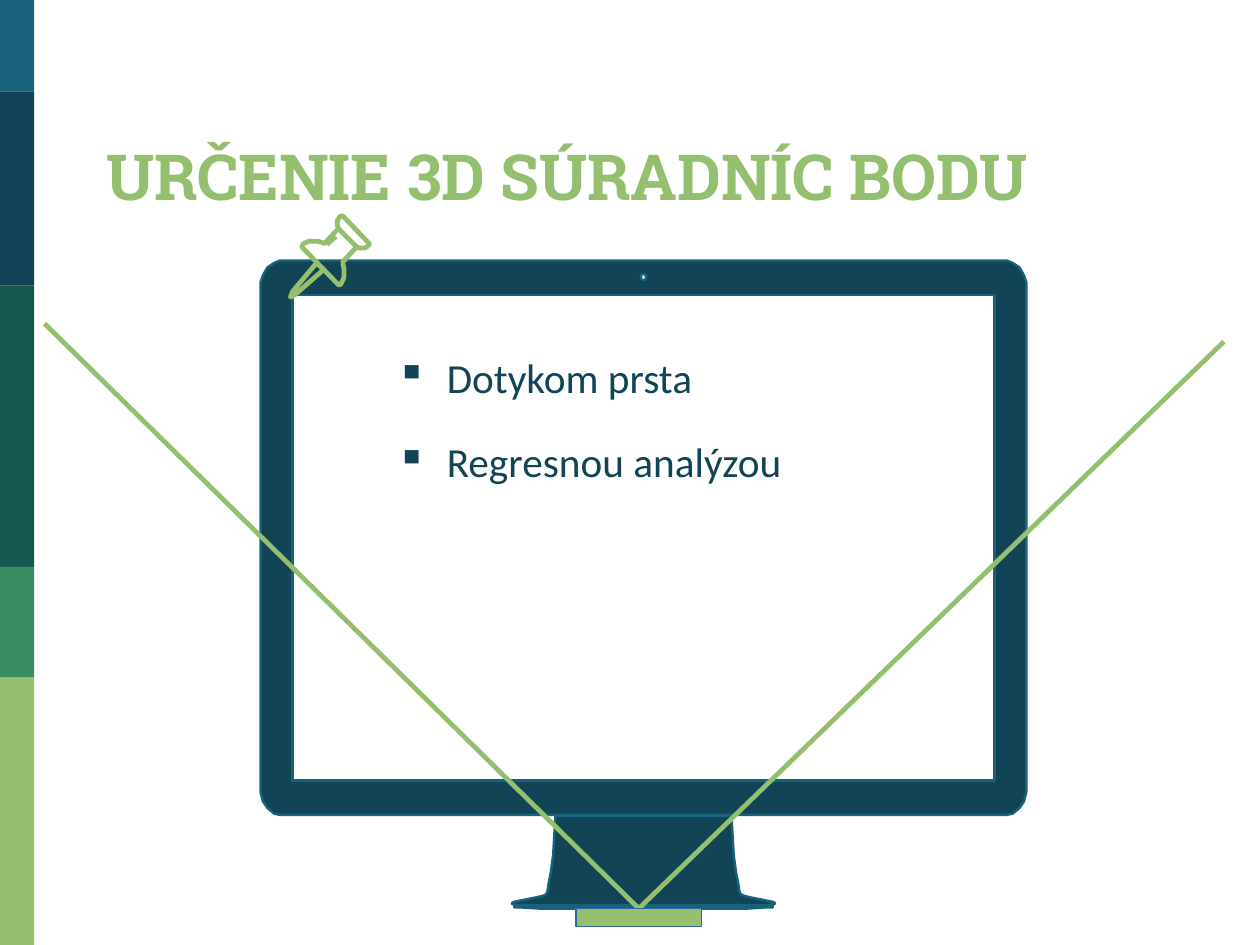
from dataclasses import dataclass

from lxml.etree import SubElement
from pptx import Presentation
from pptx.dml.color import RGBColor
from pptx.enum.shapes import MSO_CONNECTOR, MSO_SHAPE
from pptx.enum.text import MSO_ANCHOR as Anchor
from pptx.oxml.ns import qn
from pptx.util import Cm, Pt

Points = list[tuple[int, int]]


@dataclass(frozen=True)
class Theme:
    green: str = "94BF6E"
    navy: str = "114454"
    teal: str = "18637B"
    base_edge: str = "3465A4"
    strip: tuple[str, ...] = ("18637B", "124057", "165751", "3B8D61", "94BF6E")
    title_font: str = "Roboto Slab"
    body_font: str = "Calibri"
    title_size: float = 40
    body_size: float = 26
    bullet_gap: float = 22
    thick: float = 3
    medium: float = 1.5
    thin: float = 0.75


@dataclass(frozen=True)
class Box:
    left: float
    top: float
    width: float
    height: float

    def lengths(self) -> tuple[Cm, Cm, Cm, Cm]:
        return Cm(self.left), Cm(self.top), Cm(self.width), Cm(self.height)


@dataclass(frozen=True)
class Outline:
    points: Points
    closed: bool = True


THEME = Theme()
WIDTH, HEIGHT = 28, 21
STRIP_EDGES = (0, 2.03, 6.35, 12.6, 15.06, HEIGHT)
STRIP_WIDTH = 0.76
TITLE_BOX = Box(2.11, 2.69, 24.31, 2.29)
BULLET_BOX = Box(8.41, 7.58, 12.19, 10.88)
BASE_BOX = Box(12.8, 20.19, 2.79, 0.41)
RAY_STARTS = ((0.99, 7.19), (27.2, 7.59))
BULLETS = ("Dotykom prsta", "Regresnou analýzou")

GRID = Cm(0.0254)  # one unit of the outline coordinates below
MIRROR_SUM = 1126  # x of a point plus x of its mirror image on the monitor

# Left halves of the monitor's contours
CAMERA = [(563, 240), (562, 240), (561, 241), (561, 244), (562, 245), (563, 245)]
SCREEN = [(256, 258), (256, 683)]
CASE = [(245, 228), (240, 230), (234, 234), (230, 241), (228, 247),
        (228, 693), (230, 701), (234, 707), (240, 712), (245, 713)]
STAND = [(486, 714), (485, 731), (484, 748), (482, 763), (480, 773), (479, 780),
         (478, 782), (477, 783), (474, 784), (470, 785), (460, 787), (450, 789),
         (448, 790), (448, 791), (454, 792), (490, 792)]
FOOT = [(519, 793), (471, 793), (457, 792), (450, 792),
        (450, 794), (456, 794), (473, 795), (519, 795)]

PIN = (
    Outline([(277, 230), (256, 255), (254, 260), (258, 258), (283, 236)]),
    Outline([(296, 200), (312, 216), (315, 217), (319, 217), (321, 216), (322, 215),
             (323, 214), (323, 213), (322, 212), (301, 190), (300, 189), (299, 189),
             (298, 189), (297, 190), (296, 192), (295, 193), (295, 197), (296, 199)]),
    Outline([(296, 200), (284, 213), (281, 212), (278, 211), (271, 211), (268, 212),
             (266, 213), (265, 214), (264, 216), (265, 217), (295, 248), (296, 249),
             (298, 249), (299, 247), (300, 245), (301, 242), (301, 235), (300, 231),
             (300, 229), (312, 216)], closed=False),
    Outline([(286, 214), (294, 207)], closed=False),
)


def rgb(color: str) -> RGBColor:
    return RGBColor.from_string(color)


def paint(sp, fill: str | None, line: str | None, width: float = 0) -> None:
    sp.shadow.inherit = False
    if fill:
        sp.fill.solid()
        sp.fill.fore_color.rgb = rgb(fill)
    else:
        sp.fill.background()
    if line:
        sp.line.color.rgb = rgb(line)
        sp.line.width = Pt(width)
    else:
        sp.line.fill.background()


def add_rect(s, box: Box, fill: str, line: str | None = None, width: float = 0):
    sp = s.shapes.add_shape(MSO_SHAPE.RECTANGLE, *box.lengths())
    paint(sp, fill, line, width)
    return sp


def add_outlines(s, outlines: list[Outline]):
    """Build one freeform; contours inside another one become holes."""
    builder = s.shapes.build_freeform(*outlines[0].points[0], scale=GRID)
    for i, outline in enumerate(outlines):
        if i:
            builder.move_to(*outline.points[0])
        builder.add_line_segments(outline.points[1:], close=outline.closed)
    return builder.convert_to_shape()


def mirrored(half: Points) -> Outline:
    """Complete a left half with its mirror image."""
    return Outline(half + [(MIRROR_SUM - x, y) for x, y in reversed(half)])


def add_text(s, box: Box, lines: tuple[str, ...], font: str, size: float,
             color: str, bold: bool = False):
    tf = s.shapes.add_textbox(*box.lengths()).text_frame
    tf.word_wrap = True
    tf.margin_left = tf.margin_right = tf.margin_top = tf.margin_bottom = Cm(0.25)
    tf.text = "\n".join(lines)
    for p in tf.paragraphs:
        f = p.runs[0].font
        f.name, f.size, f.bold = font, Pt(size), bold
        f.color.rgb = rgb(color)
    return tf


def add_bullet(p, color: str) -> None:
    pPr = p._p.get_or_add_pPr()
    pPr.set("marL", str(Cm(1.27)))
    pPr.set("indent", str(Cm(-1.12)))
    clr = SubElement(pPr, qn("a:buClr"))
    SubElement(clr, qn("a:srgbClr"), val=color)
    SubElement(pPr, qn("a:buChar"), char="▪")


def add_ray(s, start: tuple[float, float], end: tuple[float, float]):
    ray = s.shapes.add_connector(
        MSO_CONNECTOR.STRAIGHT, *(Cm(v) for v in (*start, *end)))
    ray.line.color.rgb = rgb(THEME.green)
    ray.line.width = Pt(THEME.thick)
    SubElement(ray._element.spPr, qn("a:effectLst"))
    return ray


def main() -> None:
    prs = Presentation()
    prs.slide_width, prs.slide_height = Cm(WIDTH), Cm(HEIGHT)
    s = prs.slides.add_slide(prs.slide_layouts[6])

    for top, bottom, color in zip(STRIP_EDGES, STRIP_EDGES[1:], THEME.strip):
        add_rect(s, Box(0, top, STRIP_WIDTH, bottom - top), color)

    title = add_text(s, TITLE_BOX, ("URČENIE 3D SÚRADNÍC BODU",), THEME.title_font,
                     THEME.title_size, THEME.green, bold=True)
    title.vertical_anchor = Anchor.BOTTOM

    halves = (CAMERA, SCREEN, CASE, STAND, FOOT)
    monitor = add_outlines(s, [mirrored(half) for half in halves])
    paint(monitor, THEME.navy, THEME.teal, THEME.medium)
    for part in PIN:
        paint(add_outlines(s, [part]), None, THEME.green, THEME.thick)

    bullets = add_text(s, BULLET_BOX, BULLETS, THEME.body_font,
                       THEME.body_size, THEME.navy)
    for p in bullets.paragraphs:
        p.space_after = Pt(THEME.bullet_gap)
        add_bullet(p, THEME.navy)

    base_top = (BASE_BOX.left + BASE_BOX.width / 2, BASE_BOX.top)
    rays = [add_ray(s, start, base_top) for start in RAY_STARTS]
    base = add_rect(s, BASE_BOX, THEME.green, THEME.base_edge, THEME.thin)
    for ray in rays:
        ray.end_connect(base, 0)

    prs.save("out.pptx")


if __name__ == "__main__":
    main()
